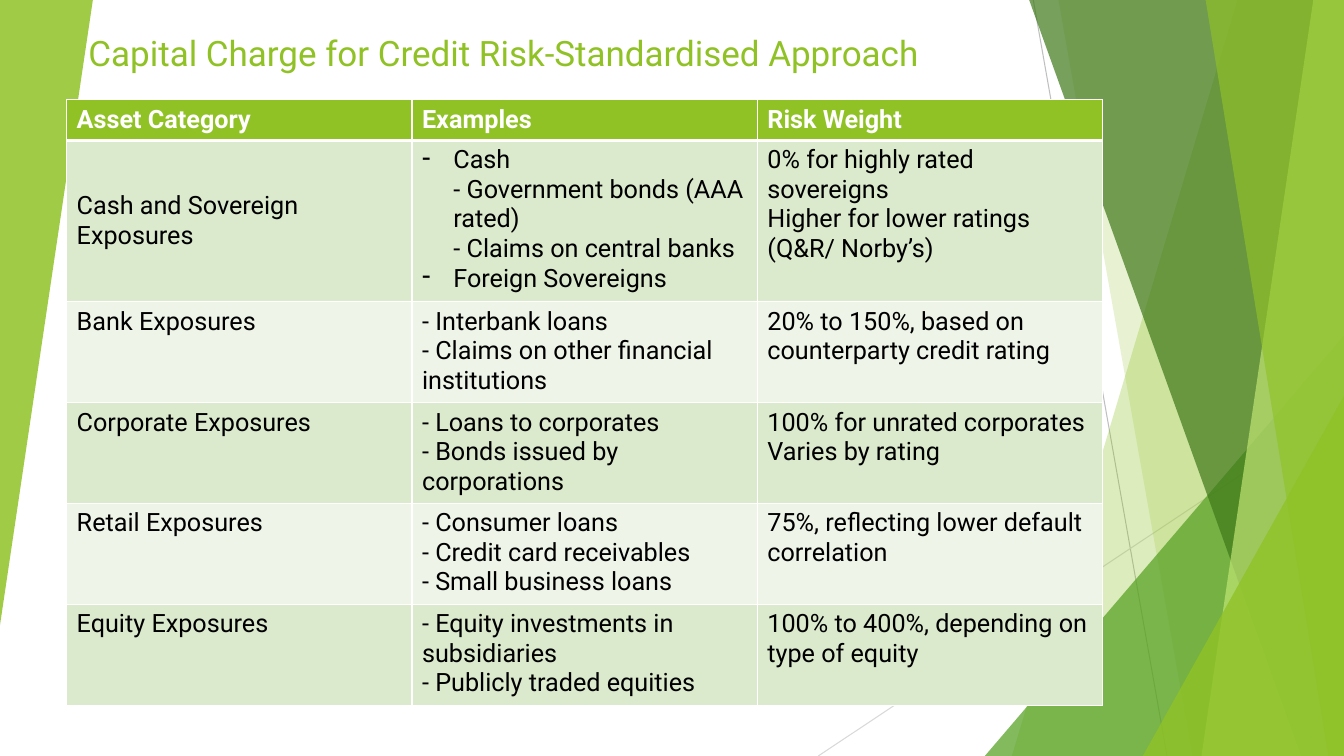
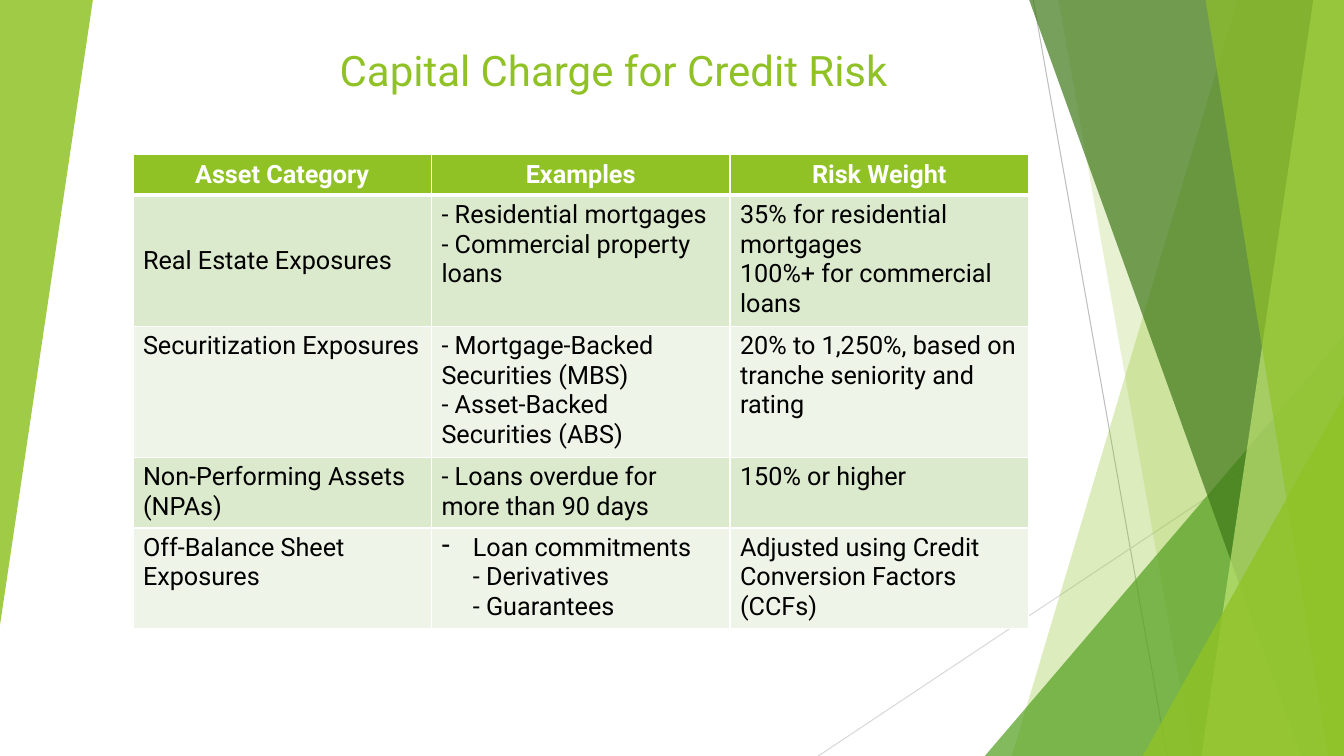
import pptx
import pptx.util
import pptx.dml.color
import pptx.enum.shapes
import pptx.enum.text
from lxml import etree
from pptx.oxml.ns import qn
from pptx.util import Cm

WIDTH, HEIGHT = 33.87, 19.05
FONT = "Roboto"
COLORS = {
    "green": "90C226",
    "leaf": "54A021",
    "dark": "3F7819",
    "lime": "C0E474",
    "band": "DBE9CD",
    "pale": "EEF4E8",
    "white": "FFFFFF",
    "black": "000000",
    "line": "BFBFBF",
    "faint": "D9D9D9",
}
ALIGN = {
    "left": pptx.enum.text.PP_ALIGN.LEFT,
    "center": pptx.enum.text.PP_ALIGN.CENTER,
    "right": pptx.enum.text.PP_ALIGN.RIGHT,
}
HEADER = ("Asset Category", "Examples", "Risk Weight")
ROW_HEIGHT = 1.03
BULLET_INDENT = 0.79


def rgb(name):
    return pptx.dml.color.RGBColor.from_string(COLORS[name])


def write(p, text, size=18, color="black", bold=False, align="left", bullet=None):
    """Fill a paragraph; newlines in the text become line breaks."""
    p.text = text
    p.alignment = ALIGN[align]
    for r in p.runs:
        r.font.name = FONT
        r.font.size = pptx.util.Pt(size)
        r.font.bold = bold
        r.font.color.rgb = rgb(color)
    if bullet:
        pPr = p._p.get_or_add_pPr()
        pPr.set("marL", str(Cm(BULLET_INDENT)))
        pPr.set("indent", str(-Cm(BULLET_INDENT)))
        etree.SubElement(pPr, qn("a:buChar"), char=bullet)


def set_borders(cell, **widths):
    """Draw white cell borders; widths in points are given by side (L, R, T, B)."""
    tcPr = cell._tc.get_or_add_tcPr()
    for side in "LRTB":
        width = pptx.util.Pt(widths.get(side, 1))
        ln = etree.SubElement(tcPr, qn("a:ln" + side), w=str(width))
        fill = etree.SubElement(ln, qn("a:solidFill"))
        etree.SubElement(fill, qn("a:srgbClr"), val=COLORS["white"])


class Deck:
    def __init__(self):
        self.prs = pptx.Presentation()
        self.prs.slide_width, self.prs.slide_height = Cm(WIDTH), Cm(HEIGHT)
        self.s = None

    def add_slide(self):
        self.s = self.prs.slides.add_slide(self.prs.slide_layouts[6])
        self.backdrop()

    def backdrop(self):
        self.line(26.04, 0, 29.41, HEIGHT, "line")
        self.line(WIDTH, 10.24, 20.62, HEIGHT, "faint")
        self.facet(31.19, 25.5, "green", 30)
        self.facet(26.67, 30.05, "green", 20)
        self.corner(24.82, 8.46, "leaf", 72)
        self.facet(25.93, 32.79, "dark", 70)
        self.facet(33.1, 30.28, "lime", 70)
        self.facet(30.38, 33.48, "green", 65)
        self.corner(28.8, 9.98, "green", 80)
        self.triangle(0, 0, 2.34, 15.75, "green", 85, rotation=180)

    def line(self, x1, y1, x2, y2, color):
        sp = self.s.shapes.add_connector(
            pptx.enum.shapes.MSO_CONNECTOR.STRAIGHT, Cm(x1), Cm(y1), Cm(x2), Cm(y2))
        sp.line.color.rgb = rgb(color)
        sp.line.width = pptx.util.Pt(0.75)
        etree.SubElement(sp.element.spPr, qn("a:effectLst"))

    def paint(self, sp, color, opacity):
        sp.shadow.inherit = False
        sp.line.fill.background()
        sp.fill.solid()
        sp.fill.fore_color.rgb = rgb(color)
        clr = sp.element.spPr.find(qn("a:solidFill")).find(qn("a:srgbClr"))
        etree.SubElement(clr, qn("a:alpha"), val=str(opacity * 1000))

    def facet(self, top_x, bottom_x, color, opacity):
        """Full-height panel from a slanted left edge to the right slide edge."""
        top = Cm(-0.02)
        fb = self.s.shapes.build_freeform(Cm(top_x), top)
        fb.add_line_segments(
            [(Cm(WIDTH), top), (Cm(WIDTH), Cm(HEIGHT)), (Cm(bottom_x), Cm(HEIGHT))])
        self.paint(fb.convert_to_shape(), color, opacity)

    def triangle(self, x, y, w, h, color, opacity, rotation=0):
        sp = self.s.shapes.add_shape(
            pptx.enum.shapes.MSO_SHAPE.ISOSCELES_TRIANGLE, Cm(x), Cm(y), Cm(w), Cm(h))
        sp.adjustments[0] = 1
        sp.rotation = rotation
        self.paint(sp, color, opacity)

    def corner(self, x, y, color, opacity):
        """Triangle that fills the bottom right corner of the slide."""
        self.triangle(x, y, WIDTH - x, HEIGHT - y, color, opacity)

    def title(self, text, x, y, w, h, **style):
        tf = self.s.shapes.add_textbox(Cm(x), Cm(y), Cm(w), Cm(h)).text_frame
        tf.word_wrap = True
        tf.vertical_anchor = pptx.enum.text.MSO_ANCHOR.BOTTOM
        write(tf.paragraphs[0], text, color="green", **style)

    def table(self, rows, x, y, w, header_align="left"):
        """Risk weight table; a list as cell content becomes bulleted paragraphs."""
        rows = [HEADER] + rows
        tbl = self.s.shapes.add_table(
            len(rows), len(HEADER), Cm(x), Cm(y), Cm(w), Cm(ROW_HEIGHT * len(rows))).table
        tbl.horz_banding = False
        for i, row in enumerate(rows):
            for j, content in enumerate(row):
                cell = tbl.cell(i, j)
                set_borders(cell, T=3 if i == 1 else 1, B=3 if i == 0 else 1)
                cell.fill.solid()
                fill = "green" if i == 0 else "band" if i % 2 else "pale"
                cell.fill.fore_color.rgb = rgb(fill)
                if i == 0 or (i, j) == (1, 0):
                    cell.vertical_anchor = pptx.enum.text.MSO_ANCHOR.MIDDLE
                style = {}
                if i == 0:
                    style = {"color": "white", "bold": True, "align": header_align}
                elif isinstance(content, list):
                    style = {"bullet": "-"}
                tf = cell.text_frame
                for k, text in enumerate(content if isinstance(content, list) else [content]):
                    write(tf.add_paragraph() if k else tf.paragraphs[0], text, **style)


def main():
    deck = Deck()

    deck.add_slide()
    deck.title("Capital Charge for Credit Risk-Standardised Approach",
               1.98, 0.61, 25.48, 1.37, size=25)
    deck.table([
        ("Cash and Sovereign Exposures",
         ["Cash\n- Government bonds (AAA rated)\n- Claims on central banks",
          "Foreign Sovereigns"],
         "0% for highly rated sovereigns\nHigher for lower ratings (Q&R/ Norby’s)"),
        ("Bank Exposures",
         "- Interbank loans\n- Claims on other financial institutions",
         "20% to 150%, based on counterparty credit rating"),
        ("Corporate Exposures",
         "- Loans to corporates\n- Bonds issued by corporations",
         "100% for unrated corporates\nVaries by rating"),
        ("Retail Exposures",
         "- Consumer loans\n- Credit card receivables\n- Small business loans",
         "75%, reflecting lower default correlation"),
        ("Equity Exposures",
         "- Equity investments in subsidiaries\n- Publicly traded equities",
         "100% to 400%, depending on type of equity"),
    ], 1.68, 2.51, 26.11)

    deck.add_slide()
    deck.title("Capital Charge for Credit Risk",
               5.64, 1.7, 16.99, 0.81, size=30, align="right")
    deck.table([
        ("Real Estate Exposures",
         "- Residential mortgages\n- Commercial property loans",
         "35% for residential mortgages\n100%+ for commercial loans"),
        ("Securitization Exposures",
         "- Mortgage-Backed Securities (MBS)\n- Asset-Backed Securities (ABS)",
         "20% to 1,250%, based on tranche seniority and rating"),
        ("Non-Performing Assets (NPAs)",
         "- Loans overdue for more than 90 days",
         "150% or higher"),
        ("Off-Balance Sheet Exposures",
         ["Loan commitments\n- Derivatives\n- Guarantees"],
         "Adjusted using Credit Conversion Factors (CCFs)"),
    ], 3.35, 3.89, 22.57, header_align="center")

    deck.prs.save("out.pptx")


if __name__ == "__main__":
    main()
